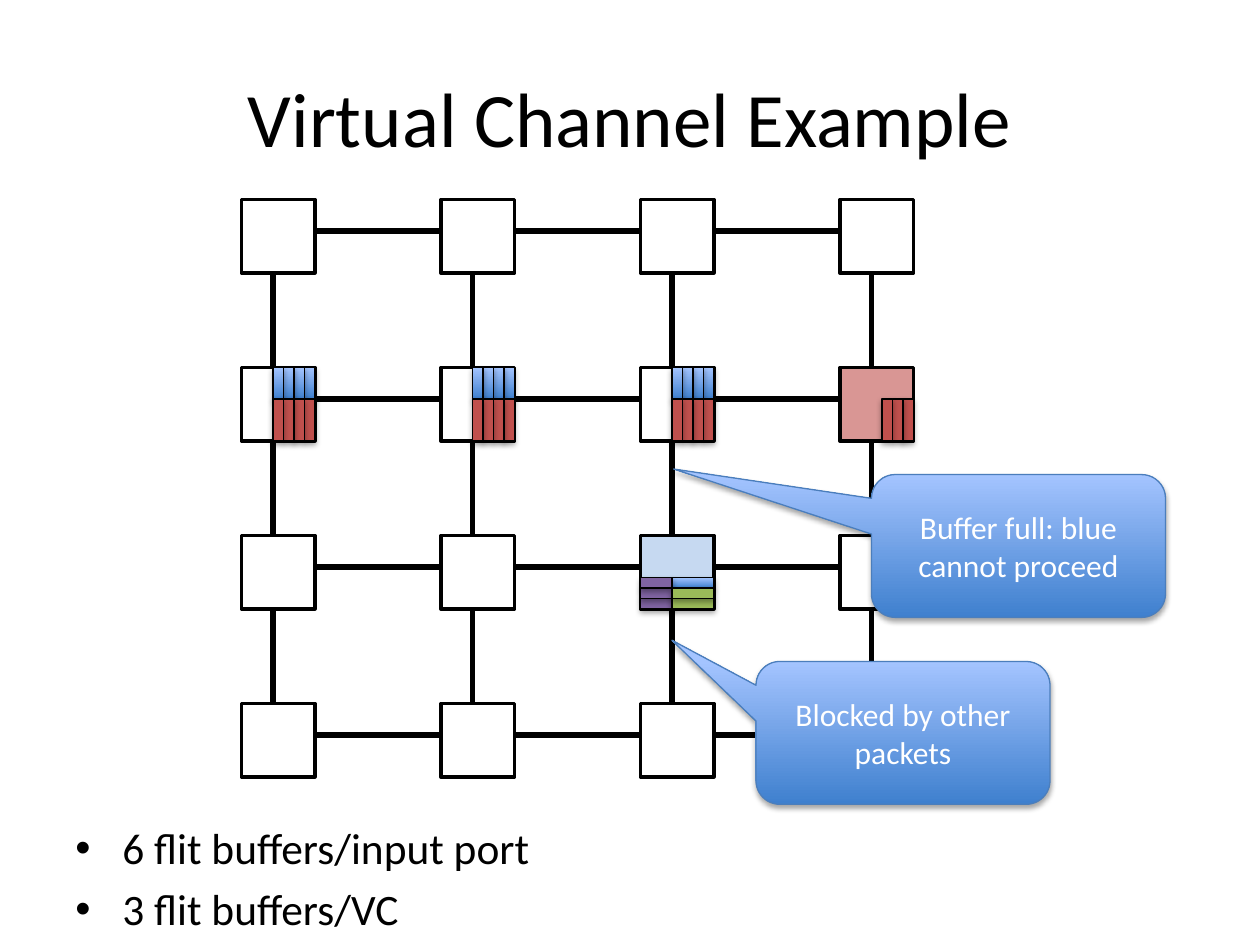
import dataclasses
import itertools

import pptx
import pptx.dml.color
import pptx.enum.shapes
import pptx.enum.text
import pptx.oxml
import pptx.oxml.ns
import pptx.util

Cm, Pt = pptx.util.Cm, pptx.util.Pt
RGB = pptx.dml.color.RGBColor.from_string
Shape = pptx.enum.shapes.MSO_SHAPE
Align = pptx.enum.text.PP_ALIGN
Anchor = pptx.enum.text.MSO_ANCHOR
qn = pptx.oxml.ns.qn

# Everything in the mesh sits on a grid whose unit is the width of one flit.
UNIT = 2.54 / 12
LEFT, TOP = 23, 19
STEP_X, STEP_Y = 19, 16
NODE, PORT = 7, 3
SIZE = 4

Gradient = tuple[str, str]


@dataclasses.dataclass(frozen=True)
class Theme:
    font: str = "Calibri"
    ink: str = "000000"
    paper: str = "FFFFFF"
    blue: Gradient = ("3F80CE", "A4C4FF")
    red: str = "C0504D"
    purple: str = "8064A2"
    green: str = "9BBB59"
    red_node: str = "D99694"
    blue_node: str = "C6D9F1"
    callout_line: str = "4B7EBC"
    title_pt: float = 44
    body_pt: float = 24.8
    callout_pt: float = 18


@dataclasses.dataclass(frozen=True)
class Buffer:
    """A run of equal flits, placed relative to its node's corner."""
    col: int
    row: int
    dx: int
    dy: int
    count: int
    width: int
    height: int
    fill: str | Gradient


@dataclasses.dataclass(frozen=True)
class Callout:
    text: str
    left: float
    top: float
    tail: tuple[float, float]


T = Theme()
NODE_FILLS = {(3, 1): T.red_node, (2, 2): T.blue_node}
BUFFERS = [
    *(Buffer(col, 1, 3, 0, 4, 1, 3, T.blue) for col in range(3)),
    *(Buffer(col, 1, 3, 3, 4, 1, 4, T.red) for col in range(3)),
    Buffer(3, 1, 4, 3, 3, 1, 4, T.red),
    Buffer(2, 2, 3, 4, 1, 4, 1, T.blue),
    Buffer(2, 2, 0, 4, 3, 3, 1, T.purple),
    Buffer(2, 2, 3, 5, 2, 4, 1, T.green),
]
CALLOUTS = [
    Callout("Blocked by other packets", 72, 63, (-0.786, -0.649)),
    Callout("Buffer full: blue cannot proceed", 83, 45.2, (-1.173, -0.539)),
]
BULLETS = ["6 flit buffers/input port", "3 flit buffers/VC"]


def grid(n: float) -> pptx.util.Length:
    return Cm(n * UNIT)


def corner(col: int, row: int) -> tuple[int, int]:
    return LEFT + col * STEP_X, TOP + row * STEP_Y


def add_run(p, text: str, size: float, color: str) -> None:
    r = p.add_run()
    r.text = text
    r.font.name, r.font.size = T.font, Pt(size)
    r.font.color.rgb = RGB(color)


def paint(s, fill: str | Gradient | None, line: str, width: float) -> None:
    s.shadow.inherit = False
    s.line.color.rgb, s.line.width = RGB(line), Pt(width)
    if fill is None:
        s.fill.background()
    elif isinstance(fill, str):
        s.fill.solid()
        s.fill.fore_color.rgb = RGB(fill)
    else:
        s.fill.gradient()
        s.fill.gradient_angle = 90
        for stop, color, position in zip(s.fill.gradient_stops, fill, (0, 1)):
            stop.color.rgb, stop.position = RGB(color), position


def add_shadow(s) -> None:
    s._element.spPr.find(qn("a:effectLst")).append(pptx.oxml.parse_xml(
        f'<a:outerShdw {pptx.oxml.ns.nsdecls("a")} blurRad="40000" dist="23000" '
        'dir="5400000" rotWithShape="0"><a:srgbClr val="000000">'
        '<a:alpha val="35000"/></a:srgbClr></a:outerShdw>'))


def add_box(slide, kind, left: float, top: float, width: float, height: float):
    return slide.shapes.add_shape(kind, *map(grid, (left, top, width, height)))


def add_link(slide, x1: int, y1: int, x2: int, y2: int) -> None:
    c = slide.shapes.add_connector(pptx.enum.shapes.MSO_CONNECTOR.STRAIGHT,
                                   *map(grid, (x1, y1, x2, y2)))
    c.line.color.rgb, c.line.width = RGB(T.ink), Pt(3)
    c._element.spPr.append(pptx.oxml.parse_xml(
        f'<a:effectLst {pptx.oxml.ns.nsdecls("a")}/>'))


def add_mesh(slide) -> None:
    for row, col in itertools.product(range(SIZE), repeat=2):
        x, y = corner(col, row)
        s = add_box(slide, Shape.RECTANGLE, x, y, NODE, NODE)
        paint(s, NODE_FILLS.get((col, row)), T.ink, 2)
        if col < SIZE - 1:
            add_link(slide, x + NODE, y + PORT, x + STEP_X, y + PORT)
        if row < SIZE - 1:
            add_link(slide, x + PORT, y + NODE, x + PORT, y + STEP_Y)


def add_buffer(slide, b: Buffer) -> None:
    """Draw the flits last to first, so that each shadow falls on the next one."""
    x, y = corner(b.col, b.row)
    upright = b.height > b.width
    for i in reversed(range(b.count)):
        left = x + b.dx + (i if upright else 0)
        top = y + b.dy + (0 if upright else i)
        s = add_box(slide, Shape.RECTANGLE, left, top, b.width, b.height)
        paint(s, b.fill, T.ink, 0.75)
        add_shadow(s)


def add_callout(slide, c: Callout) -> None:
    s = add_box(slide, Shape.ROUNDED_RECTANGULAR_CALLOUT, c.left, c.top, 28, 13.6)
    s.adjustments[0], s.adjustments[1] = c.tail
    paint(s, T.blue, T.callout_line, 0.75)
    add_shadow(s)
    tf = s.text_frame
    tf.word_wrap, tf.vertical_anchor = True, Anchor.MIDDLE
    p = tf.paragraphs[0]
    p.alignment = Align.CENTER
    add_run(p, c.text, T.callout_pt, T.paper)


def add_text_area(slide, top: float, height: float, anchor):
    s = slide.shapes.add_textbox(Cm(1.27), Cm(top), Cm(22.86), Cm(height))
    tf = s.text_frame
    tf.word_wrap, tf.vertical_anchor = True, anchor
    return tf


def add_title(slide) -> None:
    p = add_text_area(slide, 0.76, 3.18, Anchor.MIDDLE).paragraphs[0]
    p.alignment = Align.CENTER
    add_run(p, "Virtual Channel Example", T.title_pt, T.ink)


def add_bullets(slide) -> None:
    tf = add_text_area(slide, 16.43, 2.21, Anchor.TOP)
    for i, text in enumerate(BULLETS):
        p = tf.add_paragraph() if i else tf.paragraphs[0]
        p.space_before = Pt(5)
        pPr = p._p.get_or_add_pPr()
        pPr.set("marL", str(Cm(0.95)))
        pPr.set("indent", str(-Cm(0.95)))
        for tag, key, value in (("buFont", "typeface", "Arial"), ("buChar", "char", "•")):
            pPr.append(pptx.oxml.parse_xml(
                f'<a:{tag} {pptx.oxml.ns.nsdecls("a")} {key}="{value}"/>'))
        add_run(p, text, T.body_pt, T.ink)


def main() -> None:
    prs = pptx.Presentation()
    prs.slide_width, prs.slide_height = Cm(25.4), Cm(19.05)
    slide = prs.slides.add_slide(prs.slide_layouts[6])
    add_title(slide)
    add_bullets(slide)
    add_mesh(slide)
    for b in BUFFERS:
        add_buffer(slide, b)
    for c in CALLOUTS:
        add_callout(slide, c)
    prs.save("out.pptx")


if __name__ == "__main__":
    main()
